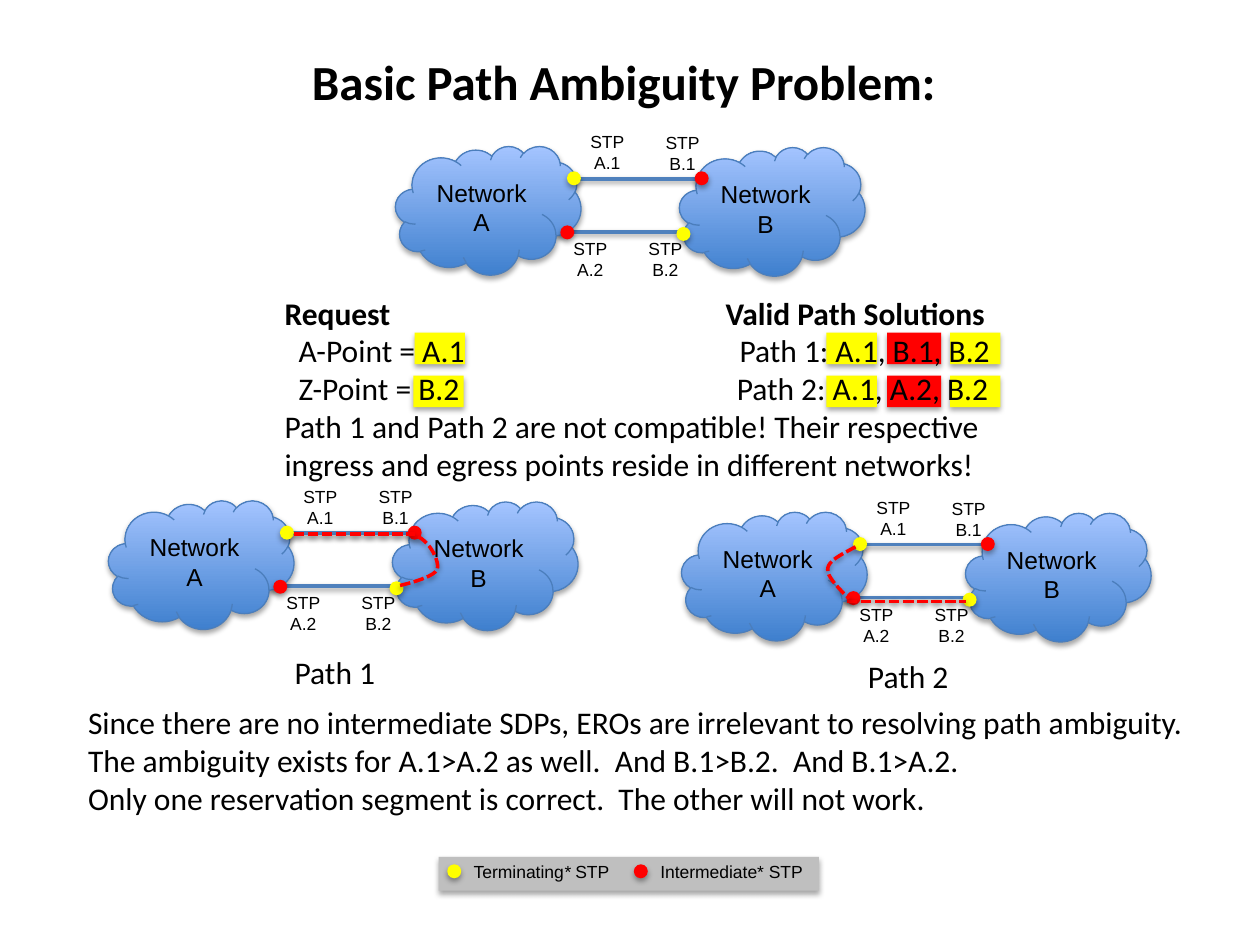
from pptx import Presentation
from pptx.dml.color import RGBColor
from pptx.enum.dml import MSO_LINE_DASH_STYLE as Dash
from pptx.enum.shapes import MSO_CONNECTOR as Connector, MSO_SHAPE as Shape
from pptx.enum.text import MSO_ANCHOR as Anchor, MSO_AUTO_SIZE as AutoSize, PP_ALIGN as Align
from pptx.oxml import parse_xml
from pptx.oxml.ns import nsdecls
from pptx.util import Pt

THEME = {
    "text": "000000", "terminating": "FFFF00", "intermediate": "FF0000", "link": "4F81BD",
    "cloud_low": "3F80CE", "cloud_high": "A4C4FF", "cloud_edge": "4B7EBC", "legend": "BFBFBF",
    "heading_font": "Calibri", "diagram_font": "Arial",
    "title": 28, "body": 18, "cloud": 14, "label": 10,
}

TITLE = "Basic Path Ambiguity Problem:"
ORIGINS = [(226, 83.5), (62, 286), (389.5, 292.5)]
LINKS = [18.7, 49]
CLOUDS = [("Network B", 162.3, 0.6), ("Network A", 0, 0)]
POINTS = [
    ("A.1", "terminating", (98, 14.4), (104, -12)),
    ("A.2", "intermediate", (94.2, 45.3), (94.3, 49)),
    ("B.2", "terminating", (160.6, 46.2), (137.2, 49)),
    ("B.1", "intermediate", (171, 14.4), (147, -11.6)),
]
ROUTES = [
    ("Path 1", (161.3, 369.4), (167.8, 236.9, 305.3),
     [(239, 306.7), (246.2, 310.3), (251.3, 321.1), (249.8, 325.4),
      (247.7, 330.5), (227.5, 334.8), (227.5, 334.8)]),
    ("Path 2", (488.9, 371.8), (483.8, 552.2, 343.6),
     [(488.9, 312.5), (481, 316.8), (473, 320.4), (473, 325.4),
      (472.3, 330.5), (485.3, 342), (485.3, 342)]),
]
HIGHLIGHT_ROWS = [(190.1, 236.9), (214.6, 236.2)]
PATH_HIGHLIGHTS = [(472.3, 28.8, "terminating"), (542.9, 28.8, "terminating"),
                   (506.9, 31, "intermediate")]
REQUEST = [
    "Request\tValid Path Solutions",
    "\tA-Point = A.1\tPath 1: A.1, B.1, B.2",
    "\tZ-Point = B.2\tPath 2: A.1, A.2, B.2",
    "Path 1 and Path 2 are not compatible! Their respective ingress and egress points "
    "reside in different networks!",
]
TAB_STOPS = [(252,), (8, 260), (8, 258.4)]
CONCLUSION = [
    "Since there are no intermediate SDPs, EROs are irrelevant to resolving path ambiguity.",
    "The ambiguity exists for A.1>A.2 as well.  And B.1>B.2.  And B.1>A.2.",
    "Only one reservation segment is correct.  The other will not work.",
]
LEGEND = [(["Terminating", "* ", "STP"], "terminating", 255.6, 93),
          (["Intermediate* STP"], "intermediate", 362.2, 99.4)]


def color(name):
    return RGBColor.from_string(THEME[name])


def add_shadow(shape, distance=1.8, opacity=35):
    shape._element.spPr.append(parse_xml(
        f'<a:effectLst {nsdecls("a")}><a:outerShdw blurRad="{Pt(3.1)}" dist="{Pt(distance)}" '
        f'dir="5400000" rotWithShape="0"><a:srgbClr val="000000">'
        f'<a:alpha val="{opacity * 1000}"/></a:srgbClr></a:outerShdw></a:effectLst>'))


def write(text_frame, lines, size, font, align=Align.LEFT):
    text_frame.text = "\n".join(lines)
    for paragraph in text_frame.paragraphs:
        paragraph.alignment = align
        for run in paragraph.runs:
            style(run, size, font)


def style(run, size, font):
    run.font.size, run.font.name = Pt(THEME[size]), THEME[font]
    run.font.color.rgb = color("text")


def add_text(shapes, lines, box, size, font, align=Align.LEFT, wrap=False):
    text_frame = shapes.add_textbox(*map(Pt, box)).text_frame
    write(text_frame, lines, size, font, align)
    text_frame.word_wrap = wrap
    text_frame.auto_size = AutoSize.SHAPE_TO_FIT_TEXT
    return text_frame


def add_block(shapes, kind, box, fill):
    shape = shapes.add_shape(kind, *map(Pt, box))
    shape.fill.solid()
    shape.fill.fore_color.rgb = color(fill)
    shape.line.fill.background()
    add_shadow(shape)


def add_cloud(shapes, name, left, top):
    shape = shapes.add_shape(Shape.CLOUD, Pt(left), Pt(top), Pt(106), Pt(73.5))
    shape.fill.gradient()
    shape.fill.gradient_angle = 90
    for stop, position, fill in zip(shape.fill.gradient_stops, (0, 1), ("cloud_low", "cloud_high")):
        stop.position, stop.color.rgb = position, color(fill)
    shape.line.color.rgb, shape.line.width = color("cloud_edge"), Pt(0.75)
    add_shadow(shape)
    write(shape.text_frame, [name], "cloud", "diagram_font", Align.CENTER)
    shape.text_frame.word_wrap = True
    shape.text_frame.vertical_anchor = Anchor.MIDDLE


def finish_line(shape, stroke, dashed):
    shape.line.color.rgb, shape.line.width = color(stroke), Pt(2)
    if dashed:
        shape.line.dash_style = Dash.SQUARE_DOT
    add_shadow(shape, 1.6, 38)


def add_line(shapes, start, end, level, stroke, dashed=False):
    line = shapes.add_connector(Connector.STRAIGHT, Pt(start), Pt(level), Pt(end), Pt(level))
    finish_line(line, stroke, dashed)


def bezier(controls, steps=12):
    for first in range(0, len(controls) - 1, 3):
        a, b, c, d = controls[first:first + 4]
        for step in range(1, steps + 1):
            t = step / steps
            weights = ((1 - t) ** 3, 3 * t * (1 - t) ** 2, 3 * t * t * (1 - t), t ** 3)
            yield tuple(Pt(sum(w * p[axis] for w, p in zip(weights, (a, b, c, d))))
                        for axis in (0, 1))


def add_curve(shapes, controls):
    builder = shapes.build_freeform(*map(Pt, controls[0]))
    builder.add_line_segments(list(bezier(controls)), close=False)
    curve = builder.convert_to_shape()
    curve.fill.background()
    finish_line(curve, "intermediate", True)


def add_diagram(shapes, left, top):
    for level in LINKS:
        add_line(shapes, left + 92, left + 175, top + level, "link")
    for name, x, y in CLOUDS:
        add_cloud(shapes, name, left + x, top + y)
    for name, role, (x, y), (label_x, label_y) in POINTS:
        add_block(shapes, Shape.OVAL, (left + x, top + y, 8, 8), role)
        add_text(shapes, ["STP", name], (left + label_x, top + label_y, 34, 31.7),
                 "label", "diagram_font", Align.CENTER)


def add_legend(shapes):
    add_block(shapes, Shape.RECTANGLE, (250.6, 489.6, 217.4, 19.4), "legend")
    for parts, role, left, width in LEGEND:
        add_block(shapes, Shape.OVAL, (left, 493.9, 8, 8), role)
        text_frame = add_text(shapes, parts[:1], (left + 8, 488.2, width, 19.4),
                              "label", "diagram_font")
        for part in parts[1:]:
            run = text_frame.paragraphs[0].add_run()
            run.text = part
            style(run, "label", "diagram_font")
            run.font.italic = part == "* "


def add_request(shapes):
    for top, request_left in HIGHLIGHT_ROWS:
        for left, width, role in PATH_HIGHLIGHTS + [(request_left, 28.8, "terminating")]:
            add_block(shapes, Shape.RECTANGLE, (left, top, width, 18), role)
    text_frame = add_text(shapes, REQUEST, (155.5, 164.2, 447, 116.6), "body", "heading_font", wrap=True)
    for run in text_frame.paragraphs[0].runs:
        run.font.bold = True
    for paragraph, stops in zip(text_frame.paragraphs, TAB_STOPS):
        tabs = "".join(f'<a:tab pos="{Pt(stop)}" algn="l"/>' for stop in stops)
        paragraph._p.get_or_add_pPr().append(
            parse_xml(f'<a:tabLst {nsdecls("a")}>{tabs}</a:tabLst>'))


def main():
    """Build the path ambiguity slide."""
    presentation = Presentation()
    presentation.slide_width, presentation.slide_height = Pt(720), Pt(540)
    shapes = presentation.slides.add_slide(presentation.slide_layouts[6]).shapes
    title = add_text(shapes, [TITLE], (168.5, 25.9, 375.8, 41), "title", "heading_font", Align.CENTER)
    title.paragraphs[0].runs[0].font.bold = True
    for origin in ORIGINS:
        add_diagram(shapes, *origin)
    for name, corner, (start, end, level), controls in ROUTES:
        add_line(shapes, start, end, level, "intermediate", dashed=True)
        add_curve(shapes, controls)
        add_text(shapes, [name], (*corner, 62, 29), "body", "heading_font")
    add_request(shapes)
    add_text(shapes, CONCLUSION, (43.2, 398.2, 658, 72.7), "body", "heading_font", wrap=True)
    add_legend(shapes.add_group_shape().shapes)
    presentation.save("out.pptx")


if __name__ == "__main__":
    main()
